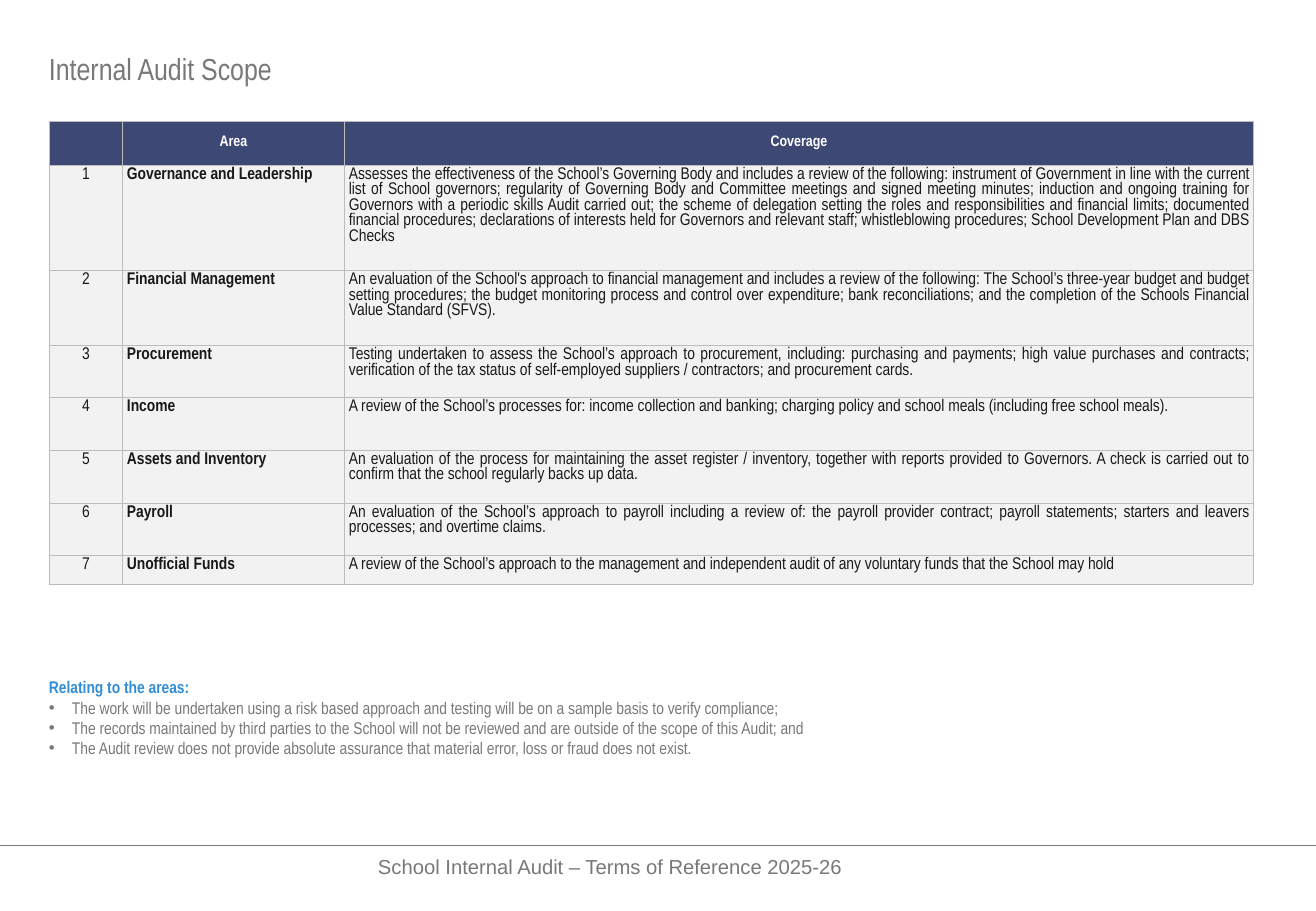
from lxml import etree
from pptx import Presentation
from pptx.dml.color import RGBColor
from pptx.enum import shapes, text
from pptx.oxml import ns
from pptx.util import Pt

EMU_PER_PX = 914400 / 121.5
NARROW = "Arial Narrow"
GREY, INK, BLUE, NAVY = "777877", "171917", "328ED6", "3E4875"
PALE, WHITE, BORDER = "F2F2F2", "FFFFFF", "BBBCBB"
ALIGN = text.PP_ALIGN

COLUMNS = [73, 222, 909]
ROW_HEIGHTS = [44, 89, 75, 52, 53, 53, 52, 29]
AREAS = [
    ("Governance and Leadership",
     "Assesses the effectiveness of the School’s Governing Body and includes a review of the following: "
     "instrument of Government in line with the current list of School governors; regularity of Governing "
     "Body and Committee meetings and signed meeting minutes; induction and ongoing training for Governors "
     "with a periodic skills Audit carried out; the scheme of delegation setting the roles and "
     "responsibilities and financial limits; documented financial procedures; declarations of interests "
     "held for Governors and relevant staff; whistleblowing procedures; School Development Plan and DBS Checks"),
    ("Financial Management",
     "An evaluation of the School's approach to financial management and includes a review of the following: "
     "The School’s three-year budget and budget setting procedures; the budget monitoring process and control "
     "over expenditure; bank reconciliations; and the completion of the Schools Financial Value Standard (SFVS)."),
    ("Procurement",
     "Testing undertaken to assess the School’s approach to procurement, including: purchasing and payments; "
     "high value purchases and contracts; verification of the tax status of self-employed suppliers / "
     "contractors; and procurement cards."),
    ("Income",
     "A review of the School’s processes for: income collection and banking; charging policy and school meals "
     "(including free school meals)."),
    ("Assets and Inventory",
     "An evaluation of the process for maintaining the asset register / inventory, together with reports "
     "provided to Governors. A check is carried out to confirm that the school regularly backs up data."),
    ("Payroll",
     "An evaluation of the School’s approach to payroll including a review of: the payroll provider contract; "
     "payroll statements; starters and leavers processes; and overtime claims."),
    ("Unofficial Funds",
     "A review of the School’s approach to the management and independent audit of any voluntary funds that "
     "the School may hold"),
]
NOTES = [
    "The work will be undertaken using a risk based approach and testing will be on a sample basis to verify compliance;",
    "The records maintained by third parties to the School will not be reviewed and are outside of the scope of this Audit; and",
    "The Audit review does not provide absolute assurance that material error, loss or fraud does not exist.",
]


def px(length):
    return round(length * EMU_PER_PX)


def color(value):
    return RGBColor.from_string(value)


def set_all(target, values):
    for name, value in values.items():
        setattr(target, name, value)


def margins(left, top, right, bottom):
    return {"margin_left": px(left), "margin_top": px(top),
            "margin_right": px(right), "margin_bottom": px(bottom)}


def write(paragraph, content, size, ink, bold=False, name=NARROW, **layout):
    run = paragraph.add_run()
    run.text = content
    set_all(run.font, {"size": Pt(size), "bold": bold, "name": name})
    run.font.color.rgb = color(ink)
    set_all(paragraph, layout)


def add_bullet(paragraph):
    properties = paragraph._p.get_or_add_pPr()
    properties.set("marL", str(px(23)))
    properties.set("indent", str(px(-23)))
    etree.SubElement(properties, ns.qn("a:buFont")).set("typeface", "Arial")
    etree.SubElement(properties, ns.qn("a:buChar")).set("char", "•")


def format_cell(cell, fill, anchor):
    set_all(cell, {**margins(5, 2, 4, 2), "vertical_anchor": anchor})
    properties = cell._tc.get_or_add_tcPr()
    for side in ("lnL", "lnR", "lnT", "lnB"):
        line = etree.SubElement(properties, ns.qn("a:" + side), w=str(Pt(0.25)))
        solid = etree.SubElement(line, ns.qn("a:solidFill"))
        etree.SubElement(solid, ns.qn("a:srgbClr"), val=BORDER)
    cell.fill.solid()
    cell.fill.fore_color.rgb = color(fill)


def add_title(slide, left, top, width, height):
    title = slide.shapes.title
    set_all(title, {"left": px(left), "top": px(top), "width": px(width), "height": px(height)})
    frame = title.text_frame
    set_all(frame, {**margins(0, 0, 12, 6), "word_wrap": True,
                    "vertical_anchor": text.MSO_ANCHOR.MIDDLE})
    write(frame.paragraphs[0], "Internal Audit Scope", 18, GREY,
          alignment=ALIGN.LEFT, line_spacing=0.9, space_before=Pt(1.6))


def add_scope_table(slide, left, top):
    table = slide.shapes.add_table(len(ROW_HEIGHTS), len(COLUMNS), px(left), px(top),
                                   px(sum(COLUMNS)), px(sum(ROW_HEIGHTS))).table
    table.horz_banding = False
    for column, width in zip(table.columns, COLUMNS):
        column.width = px(width)
    for row, height in zip(table.rows, ROW_HEIGHTS):
        row.height = px(height)
    for cell, heading in zip(table.rows[0].cells, ("", "Area", "Coverage")):
        format_cell(cell, NAVY, text.MSO_ANCHOR.MIDDLE)
        if heading:
            write(cell.text_frame.paragraphs[0], heading, 9, WHITE, True, alignment=ALIGN.CENTER)
    alignments = (ALIGN.CENTER, ALIGN.LEFT, ALIGN.JUSTIFY)
    for number, (area, coverage) in enumerate(AREAS, 1):
        contents = (str(number), area, coverage)
        for cell, content, alignment in zip(table.rows[number].cells, contents, alignments):
            format_cell(cell, PALE, text.MSO_ANCHOR.TOP)
            write(cell.text_frame.paragraphs[0], content, 10, INK, content == area,
                  alignment=alignment, space_before=Pt(3), space_after=Pt(3))


def add_text_frame(slide, left, top, width, height, insets):
    frame = slide.shapes.add_textbox(px(left), px(top), px(width), px(height)).text_frame
    set_all(frame, {**margins(*insets), "word_wrap": True})
    return frame


def add_notes(slide, left, top, width, height):
    frame = add_text_frame(slide, left, top, width, height, (0, 6, 12, 6))
    write(frame.paragraphs[0], "Relating to the areas:", 10, BLUE, True)
    for note in NOTES:
        paragraph = frame.add_paragraph()
        write(paragraph, note, 10, GREY)
        add_bullet(paragraph)


def add_footer(slide, top, width):
    rule = slide.shapes.add_connector(shapes.MSO_CONNECTOR.STRAIGHT, 0, px(top), px(width), px(top))
    rule.line.width = Pt(0.5)
    rule.line.color.rgb = color(GREY)
    etree.SubElement(rule._element.spPr, ns.qn("a:effectLst"))
    frame = add_text_frame(slide, 366, top + 3, 640, 52, (12, 6, 12, 6))
    write(frame.paragraphs[0], "School Internal Audit – Terms of Reference 2025-26", 12, GREY, name="Arial")


def main():
    presentation = Presentation()
    set_all(presentation, {"slide_width": px(1316), "slide_height": px(911)})
    slide = presentation.slides.add_slide(presentation.slide_layouts[5])
    add_footer(slide, 845, 1316)
    add_title(slide, 49, 46, 1249, 55)
    add_scope_table(slide, 49, 121)
    add_notes(slide, 49, 671, 1185, 94)
    presentation.save("out.pptx")


if __name__ == "__main__":
    main()
